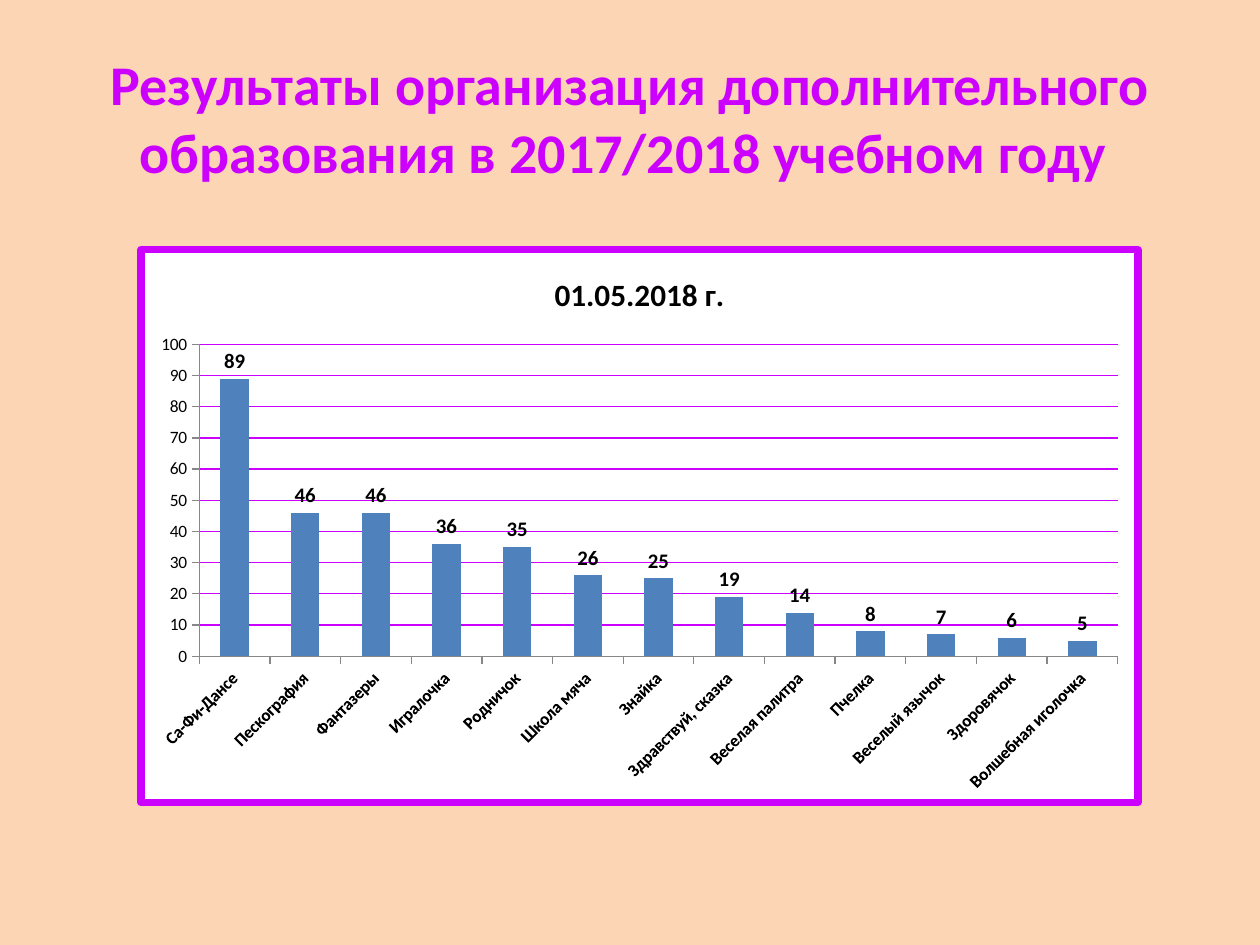
"""Build the slide on enrolment in supplementary education clubs."""
import pptx
import pptx.chart.data
import pptx.dml.color
import pptx.enum.chart
import pptx.enum.text
import pptx.oxml
import pptx.oxml.ns
import pptx.util
from pptx.util import Inches

HEADING = "Результаты организация дополнительного образования в 2017/2018 учебном году "
REPORT_DATE = "01.05.2018 г."
CLUBS = [
    ("Са-Фи-Дансе", 89),
    ("Пескография", 46),
    ("Фантазеры", 46),
    ("Игралочка", 36),
    ("Родничок", 35),
    ("Школа мяча", 26),
    ("Знайка", 25),
    ("Здравствуй, сказка", 19),
    ("Веселая палитра", 14),
    ("Пчелка", 8),
    ("Веселый язычок", 7),
    ("Здоровячок", 6),
    ("Волшебная иголочка", 5),
]
THEME = {
    "font": "Calibri",
    "background": "FCD5B5",
    "accent": "CC00FF",
    "bar": "4F81BD",
    "axis": "878787",
    "text": "000000",
    "panel": "FFFFFF",
    "heading_size": 32,
    "date_size": 18,
    "label_size": 12,
    "axis_size": 10,
    "border": 4.5,
    "hairline": 0.75,
}


def rgb(name):
    return pptx.dml.color.RGBColor.from_string(THEME[name])


def style_font(font, size, color="text", bold=False):
    font.name = THEME["font"]
    font.size = pptx.util.Pt(THEME[size])
    font.bold = bold
    font.color.rgb = rgb(color)


def style_line(line, color):
    line.color.rgb = rgb(color)
    line.width = pptx.util.Pt(THEME["hairline"])


def frame_chart(chart):
    frame = pptx.oxml.parse_xml(
        f'<c:spPr {pptx.oxml.ns.nsdecls("c", "a")}>'
        f'<a:solidFill><a:srgbClr val="{THEME["panel"]}"/></a:solidFill>'
        f'<a:ln w="{pptx.util.Pt(THEME["border"])}"><a:solidFill>'
        f'<a:srgbClr val="{THEME["accent"]}"/></a:solidFill><a:round/></a:ln></c:spPr>'
    )
    chart.element.find(pptx.oxml.ns.qn("c:chart")).addnext(frame)


def add_heading(slide):
    heading = slide.shapes.title
    heading.left, heading.top = Inches(0.31), Inches(0.3)
    heading.width, heading.height = Inches(9.38), Inches(1.26)
    heading.text_frame.vertical_anchor = pptx.enum.text.MSO_ANCHOR.MIDDLE
    paragraph = heading.text_frame.paragraphs[0]
    paragraph.alignment = pptx.enum.text.PP_ALIGN.CENTER
    run = paragraph.add_run()
    run.text = HEADING
    style_font(run.font, "heading_size", "accent", True)


def add_club_chart(slide):
    enrolment = pptx.chart.data.CategoryChartData()
    enrolment.categories = [club for club, _ in CLUBS]
    enrolment.add_series(REPORT_DATE, [children for _, children in CLUBS])
    chart = slide.shapes.add_chart(
        pptx.enum.chart.XL_CHART_TYPE.COLUMN_CLUSTERED,
        Inches(1.09), Inches(1.95), Inches(7.97), Inches(4.45), enrolment,
    ).chart
    style_font(chart.font, "axis_size")
    frame_chart(chart)
    chart.has_legend = False
    chart.has_title = True
    date = chart.chart_title.text_frame.paragraphs[0].add_run()
    date.text = REPORT_DATE
    style_font(date.font, "date_size", bold=True)

    for axis, bold in ((chart.category_axis, True), (chart.value_axis, False)):
        style_font(axis.tick_labels.font, "axis_size", bold=bold)
        style_line(axis.format.line, "axis")
        axis.major_tick_mark = pptx.enum.chart.XL_TICK_MARK.OUTSIDE
        axis.minor_tick_mark = pptx.enum.chart.XL_TICK_MARK.NONE
    label_body = chart.category_axis.tick_labels.font._element.getparent().getparent().getparent()
    label_body.find(pptx.oxml.ns.qn("a:bodyPr")).set("rot", "-2700000")
    children_axis = chart.value_axis
    children_axis.minimum_scale, children_axis.maximum_scale = 0, 100
    children_axis.major_unit = 10
    children_axis.has_major_gridlines = True
    style_line(children_axis.major_gridlines.format.line, "accent")

    plot = chart.plots[0]
    plot.gap_width = 150
    plot.vary_by_categories = False
    bars = plot.series[0]
    bars.format.fill.solid()
    bars.format.fill.fore_color.rgb = rgb("bar")
    labels = bars.data_labels
    labels.show_value = True
    labels.position = pptx.enum.chart.XL_LABEL_POSITION.OUTSIDE_END
    style_font(labels.font, "label_size", bold=True)


def main():
    deck = pptx.Presentation()
    deck.slide_width, deck.slide_height = Inches(10), Inches(7.5)
    slide = deck.slides.add_slide(deck.slide_layouts.get_by_name("Title Only"))
    slide.background.fill.solid()
    slide.background.fill.fore_color.rgb = rgb("background")
    add_heading(slide)
    add_club_chart(slide)
    deck.save("out.pptx")


if __name__ == "__main__":
    main()
